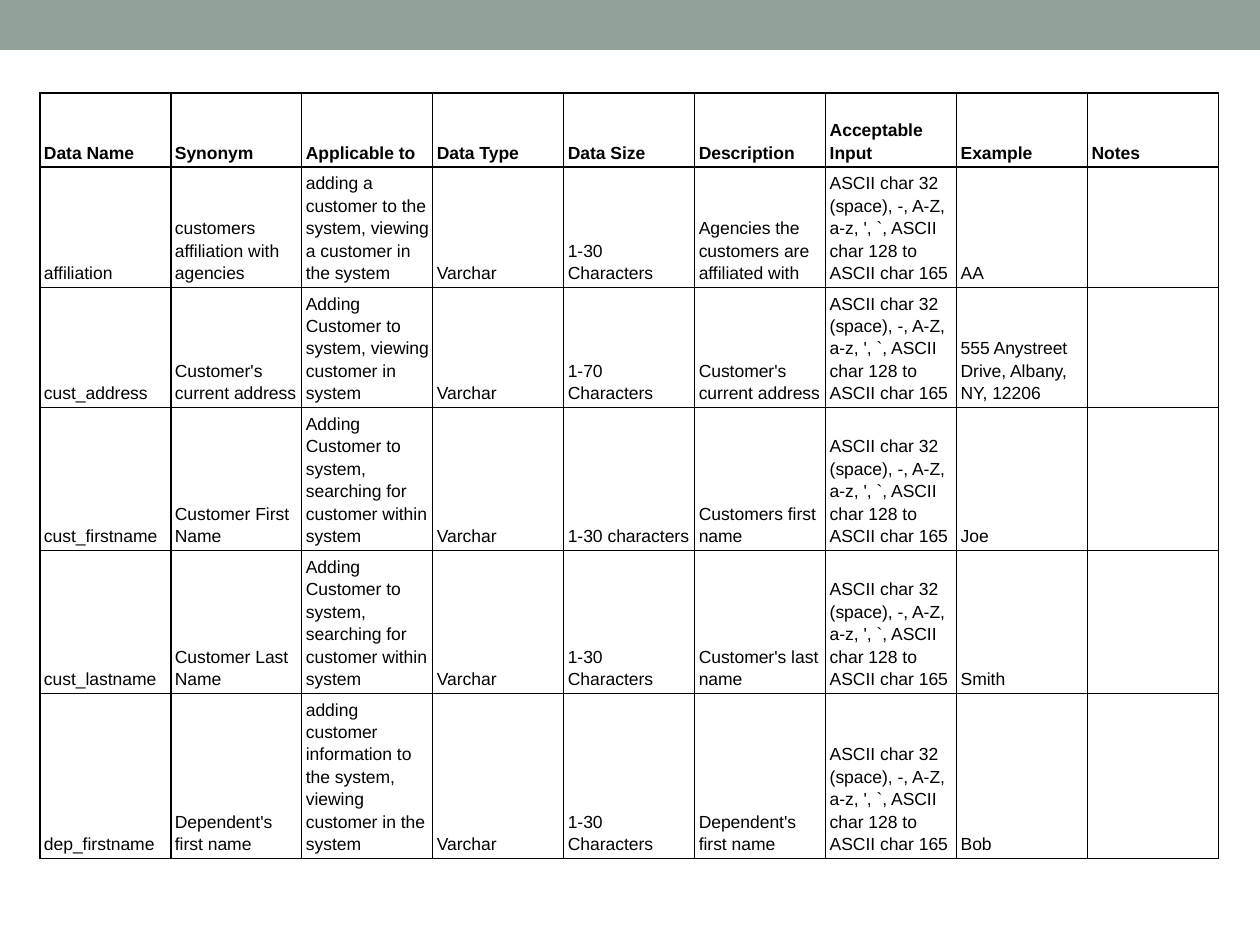
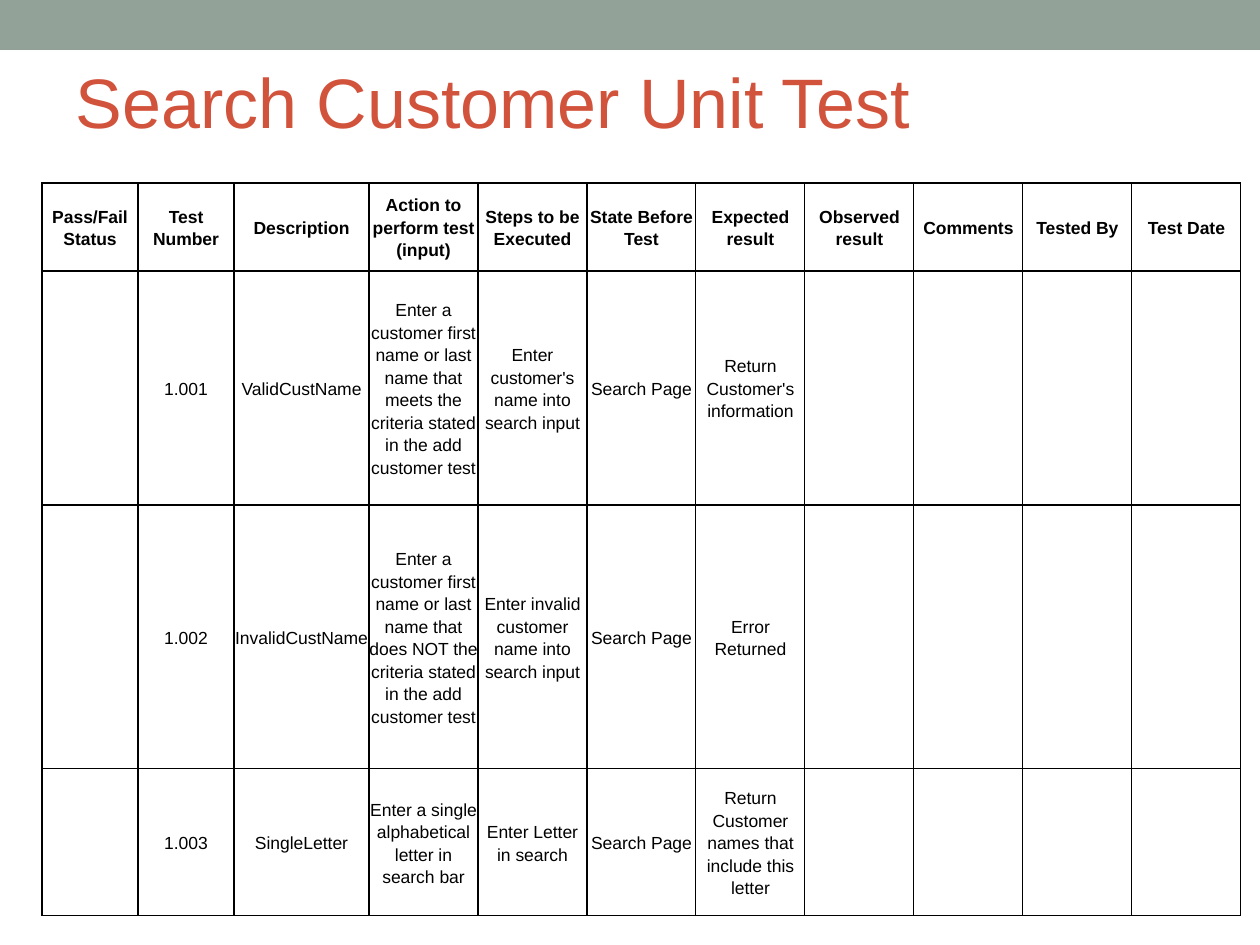
"""Build two slides: a data dictionary table and a unit test table."""
from lxml import etree
from pptx import Presentation
from pptx import util as u
from pptx.dml.color import RGBColor
from pptx.enum import shapes, text
from pptx.oxml import ns

SAGE = RGBColor(0x93, 0xA2, 0x99)
RUST = RGBColor(0xD2, 0x53, 0x3C)
BLACK = RGBColor(0, 0, 0)
FONT = "Arial"
SIDES = ("a:lnL", "a:lnR", "a:lnT", "a:lnB")
ASCII_INPUT = "ASCII char 32 (space), -, A-Z, a-z, ', `, ASCII char 128 to ASCII char 165"


def px(count):
    return u.Emu(round(count * 914400 / 126))


def add_grid(page, left, top, widths, heights, rows, inset, anchor, align):
    frame = page.shapes.add_table(len(heights), len(widths), px(left), px(top),
                                  px(sum(widths)), px(sum(heights)))
    table = frame.table
    table.first_row = table.horz_banding = False
    for column, width in zip(table.columns, widths):
        column.width = px(width)
    for row, height in zip(table.rows, heights):
        row.height = px(height)
    for row_index, values in enumerate(rows):
        for column_index in range(len(widths)):
            cell = table.cell(row_index, column_index)
            cell.margin_left = cell.margin_right = px(inset)
            cell.margin_top = cell.margin_bottom = px(inset)
            cell.vertical_anchor = anchor
            properties = cell._tc.get_or_add_tcPr()
            for side in SIDES:
                line = etree.SubElement(properties, ns.qn(side), w=str(u.Pt(0.75)))
                solid = etree.SubElement(line, ns.qn("a:solidFill"))
                etree.SubElement(solid, ns.qn("a:srgbClr"), val=str(BLACK))
            cell.fill.background()
            para = cell.text_frame.paragraphs[0]
            para.text = values[column_index] if column_index < len(values) else ""
            para.alignment = align
            para.line_spacing = 1.15
            para.font.size = u.Pt(10)
            for span in para.runs:
                span.font.name = FONT
                span.font.size = u.Pt(10)
                span.font.bold = row_index == 0
                span.font.color.rgb = BLACK


deck = Presentation()
deck.slide_width, deck.slide_height = px(1260), px(945)

dictionary_page = deck.slides.add_slide(deck.slide_layouts[6])
band = dictionary_page.shapes.add_shape(shapes.MSO_SHAPE.RECTANGLE, 0, 0, px(1260), px(50))
band.shadow.inherit = False
band.fill.solid()
band.fill.fore_color.rgb = SAGE
band.line.fill.background()
deck.slide_master.shapes.element.insert(2, band.element)

fields = [
    ("affiliation", "customers affiliation with agencies",
     "adding a customer to the system, viewing a customer in the system",
     "1-30 Characters", "Agencies the customers are affiliated with", "AA"),
    ("cust_address", "Customer's current address",
     "Adding Customer to system, viewing customer in system",
     "1-70 Characters", "Customer's current address",
     "555 Anystreet Drive, Albany, NY, 12206"),
    ("cust_firstname", "Customer First Name",
     "Adding Customer to system, searching for customer within system",
     "1-30 characters", "Customers first name", "Joe"),
    ("cust_lastname", "Customer Last Name",
     "Adding Customer to system, searching for customer within system",
     "1-30 Characters", "Customer's last name", "Smith"),
    ("dep_firstname", "Dependent's first name",
     "adding customer information to the system, viewing customer in the system",
     "1-30 Characters", "Dependent's first name", "Bob"),
]
dictionary_rows = [("Data Name", "Synonym", "Applicable to", "Data Type", "Data Size",
                    "Description", "Acceptable Input", "Example", "Notes")]
for name, synonym, usage, size, description, example in fields:
    dictionary_rows.append((name, synonym, usage, "Varchar", size, description,
                            ASCII_INPUT, example))
add_grid(dictionary_page, 40, 93, [131] * 9, [74, 119, 120, 141, 142, 165],
         dictionary_rows, 4, text.MSO_ANCHOR.BOTTOM, text.PP_ALIGN.LEFT)

test_page = deck.slides.add_slide(deck.slide_layouts[5])
title = test_page.shapes.title
title.left, title.top, title.width, title.height = px(63), px(47), px(1134), px(136)
box = title.text_frame
box.text = "Search Customer Unit Test"
box.word_wrap = True
box.auto_size = text.MSO_AUTO_SIZE.NONE
box.vertical_anchor = text.MSO_ANCHOR.MIDDLE
box.margin_left = box.margin_right = box.margin_top = px(13)
box.margin_bottom = px(41)
para = box.paragraphs[0]
para.alignment = text.PP_ALIGN.LEFT
span = para.runs[0]
span.font.name = FONT
span.font.size = u.Pt(40)
span.font.color.rgb = RUST

test_rows = [
    ("Pass/Fail Status", "Test Number", "Description", "Action to perform test (input)",
     "Steps to be Executed", "State Before Test", "Expected result", "Observed result",
     "Comments", "Tested By", "Test Date"),
    ("", "1.001", "ValidCustName",
     "Enter a customer first name or last name that meets the criteria stated "
     "in the add customer test",
     "Enter customer's name into search input", "Search Page",
     "Return Customer's information"),
    ("", "1.002", "InvalidCustName",
     "Enter a customer first name or last name that does NOT the criteria stated "
     "in the add customer test",
     "Enter invalid customer name into search input", "Search Page", "Error Returned"),
    ("", "1.003", "SingleLetter", "Enter a single alphabetical letter in search bar",
     "Enter Letter in search", "Search Page",
     "Return Customer names that include this letter"),
]
add_grid(test_page, 42, 183, [96, 96, 135] + [109] * 8, [88, 234, 264, 147],
         test_rows, 0, text.MSO_ANCHOR.MIDDLE, text.PP_ALIGN.CENTER)

deck.save("out.pptx")
